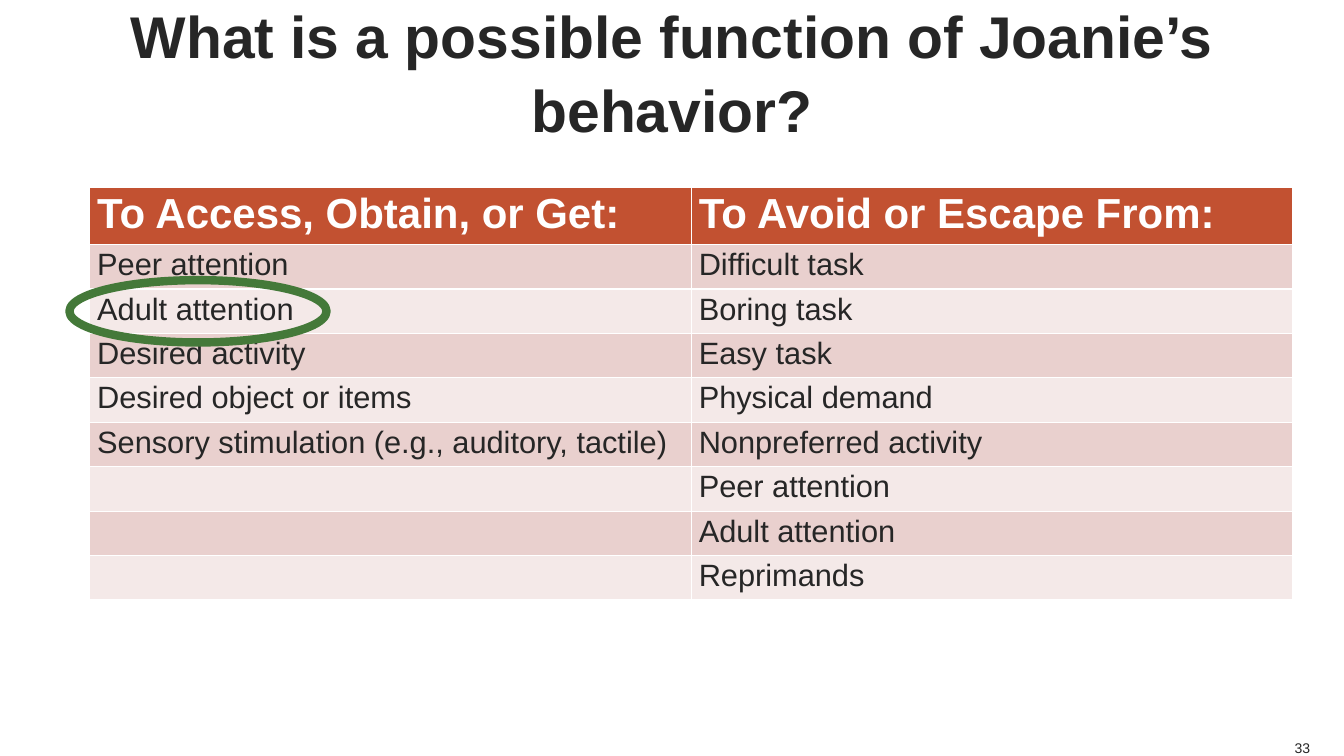
"""Build the slide on possible functions of Joanie's behavior."""
from itertools import zip_longest

from pptx import Presentation
from pptx.dml.color import RGBColor
from pptx.enum.shapes import MSO_SHAPE
from pptx.enum.text import MSO_ANCHOR, PP_ALIGN
from pptx.util import Cm, Pt

TITLE = "What is a possible function of Joanie’s behavior?"
PAGE = "33"
HEADS = ("To Access, Obtain, or Get:", "To Avoid or Escape From:")
GET = ("Peer attention", "Adult attention", "Desired activity",
       "Desired object or items",
       "Sensory stimulation (e.g., auditory, tactile)")
AVOID = ("Difficult task", "Boring task", "Easy task", "Physical demand",
         "Nonpreferred activity", "Peer attention", "Adult attention",
         "Reprimands")
INK, WHITE, RUST, GREEN = "262626", "FFFFFF", "C25131", "447939"
BANDS = ("F4E9E8", "E9D0CE")
LEFT, TOP, COL, HEAD, ROW = 2.26, 4.73, 15.16, 1.39, 1.12


def paint(part, color):
    part.solid()
    part.fore_color.rgb = RGBColor.from_string(color)


def style(par, size, color, bold=False):
    font = par.font
    font.name, font.size, font.bold = "Arial", Pt(size), bold
    paint(font.fill, color)


def label(slide, box, text, size, align, anchor, bold=False, wrap=True):
    frame = slide.shapes.add_textbox(*map(Cm, box)).text_frame
    frame.margin_left = frame.margin_right = 0
    frame.margin_top = frame.margin_bottom = 0
    frame.word_wrap, frame.vertical_anchor = wrap, anchor
    par = frame.paragraphs[0]
    par.text, par.alignment = text, align
    style(par, size, INK, bold)
    return par


def fill_table(slide):
    rows = [HEADS, *zip_longest(GET, AVOID, fillvalue="")]
    high = HEAD + ROW * (len(rows) - 1)
    table = slide.shapes.add_table(
        len(rows), 2, Cm(LEFT), Cm(TOP), Cm(2 * COL), Cm(high)).table
    for col in table.columns:
        col.width = Cm(COL)
    for r, texts in enumerate(rows):
        head = r == 0
        table.rows[r].height = Cm(HEAD if head else ROW)
        for c, text in enumerate(texts):
            cell = table.cell(r, c)
            cell.margin_left = cell.margin_right = Cm(0.19)
            cell.margin_top = cell.margin_bottom = Cm(0.08)
            paint(cell.fill, RUST if head else BANDS[r % 2])
            par = cell.text_frame.paragraphs[0]
            if text:
                par.text = text
            style(par, 30 if head else 22, WHITE if head else INK, head)


def main():
    deck = Presentation()
    deck.slide_width, deck.slide_height = Cm(33.87), Cm(19.05)
    slide = deck.slides.add_slide(deck.slide_layouts[6])
    title = label(slide, (1.27, 0, 31.33, 3.56), TITLE, 42,
                  PP_ALIGN.CENTER, MSO_ANCHOR.MIDDLE, bold=True)
    title.line_spacing = 1.05
    label(slide, (32.59, 18.62, 0.43, 0.43), PAGE, 10,
          PP_ALIGN.RIGHT, MSO_ANCHOR.BOTTOM, wrap=False)
    fill_table(slide)
    ring = slide.shapes.add_shape(
        MSO_SHAPE.OVAL, Cm(1.75), Cm(7.06), Cm(6.48), Cm(1.57))
    ring.shadow.inherit = False
    ring.fill.background()
    paint(ring.line.fill, GREEN)
    ring.line.width = Pt(6)
    deck.save("out.pptx")


if __name__ == "__main__":
    main()
